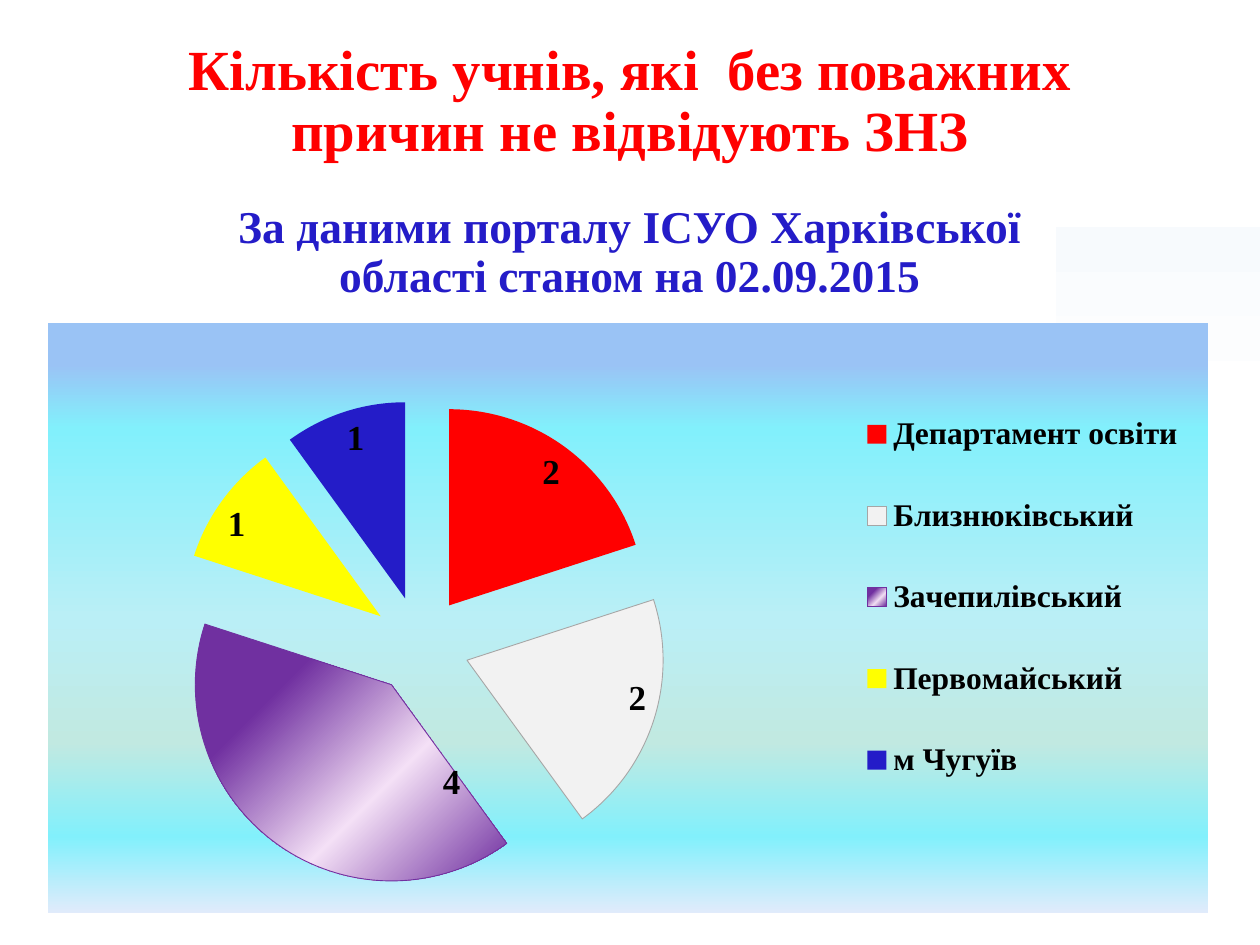
from lxml.etree import fromstring
from pptx import Presentation
from pptx.chart.data import CategoryChartData as Data
from pptx.dml.color import RGBColor as RGB
from pptx.enum.chart import XL_CHART_TYPE as Kind, XL_LABEL_POSITION as Spot
from pptx.enum.chart import XL_LEGEND_POSITION as Side
from pptx.enum.shapes import MSO_SHAPE as Form
from pptx.enum.text import MSO_ANCHOR as Anchor, PP_ALIGN as Align
from pptx.util import Inches, Pt

RED, BLUE = RGB(255, 0, 0), RGB(0x24, 0x1C, 0xC8)
YELLOW, PALE = RGB(255, 255, 0), RGB(0xF2, 0xF2, 0xF2)
PURPLE, GREY = RGB(0x70, 0x30, 0xA0), RGB(0xA6, 0xA6, 0xA6)
BLACK = RGB(0, 0, 0)
SERIF = "Times New Roman"
NS = ('xmlns:a="http://schemas.openxmlformats.org/drawingml/2006/main" '
      'xmlns:c="http://schemas.openxmlformats.org/drawingml/2006/chart"')


def grad(stops, angle):
    """Linear gradient fill from (percent, hex colour) stops."""
    marks = "".join(f'<a:gs pos="{pos * 1000}"><a:srgbClr val="{tone}"/></a:gs>'
                    for pos, tone in stops)
    return fromstring(f'<a:gradFill {NS} rotWithShape="1"><a:gsLst>{marks}</a:gsLst>'
                      f'<a:lin ang="{angle * 60000}" scaled="0"/></a:gradFill>')


def layout(inner=False, mode=True, **share):
    """Manual chart layout in shares of the chart's size."""
    tags = '<c:layoutTarget val="inner"/>' if inner else ""
    if mode:
        tags += '<c:xMode val="edge"/><c:yMode val="edge"/>'
    tags += "".join(f'<c:{key} val="{val}"/>' for key, val in share.items())
    return fromstring(f'<c:layout {NS}><c:manualLayout>{tags}</c:manualLayout></c:layout>')


deck = Presentation()
deck.slide_width, deck.slide_height = Inches(10), Inches(7.5)
slide = deck.slides.add_slide(deck.slide_layouts[5])
shapes = slide.shapes
title = shapes.title

# Faint panel at the right edge, behind everything
panel = shapes.add_shape(Form.RECTANGLE, Inches(8.38), Inches(1.8), Inches(1.62), Inches(1.92))
panel.shadow.inherit = False
panel.line.fill.background()
panel.fill.solid()
fill = panel.fill._xPr.find("{*}solidFill")
fill.getparent().replace(fill, grad([(0, "F7FAFD"), (74, "FFFFFF"), (100, "FFFFFF")], 90))
title._element.addprevious(panel._element)

# Heading and source line
note = shapes.add_textbox(0, 0, 0, 0)
heads = [
    (title, (0.75, 0.31, 8.5, 1.04), Anchor.BOTTOM, 32.4, RED,
     "Кількість учнів, які  без поважних причин не відвідують ЗНЗ"),
    (note, (1.25, 1.57, 7.5, 0.93), Anchor.TOP, 26, BLUE,
     "За даними порталу ІСУО Харківської області станом на 02.09.2015"),
]
for box, place, anchor, size, tone, words in heads:
    box.left, box.top, box.width, box.height = map(Inches, place)
    frame = box.text_frame
    frame.text = words
    frame.word_wrap, frame.vertical_anchor = True, anchor
    para = frame.paragraphs[0]
    para.alignment, para.line_spacing = Align.CENTER, 0.9
    for key, val in dict(name=SERIF, size=Pt(size), bold=True).items():
        setattr(para.font, key, val)
    para.font.color.rgb = tone

# Pie chart
data = Data()
data.categories = ["Департамент освіти", "Близнюківський", "Зачепилівський",
                   "Первомайський", "м Чугуїв"]
data.add_series("Series 1", (2, 2, 4, 1, 1))
chart = shapes.add_chart(Kind.PIE, Inches(0.38), Inches(2.56), Inches(9.21),
                         Inches(4.69), data).chart
chart.has_title = False
chart.font.size, chart.font.name = Pt(10), "Calibri"
plot = chart.plots[0]
plot.vary_by_categories = True
area = plot._element.getparent()
for old in area.findall("{*}layout"):
    area.remove(old)
area.insert(0, layout(inner=True, x=0.013, y=0.131, w=0.616, h=0.83))

# Chart backdrop
back = fromstring(f"<c:spPr {NS}><a:ln><a:noFill/></a:ln></c:spPr>")
back.insert(0, grad([(7, "9AC3F5"), (18, "82F0FC"), (50, "BAEFF6"), (71, "C1E9E1"),
                     (87, "82F0FC"), (100, "E1EBFB")], 90))
chart._chartSpace.find("{*}chart").addnext(back)

# Slices, pulled apart
pie = plot.series[0]
edges = {1: GREY, 2: PURPLE}
for num, tone in enumerate([RED, PALE, PURPLE, YELLOW, BLUE]):
    look = pie.points[num].format
    look.fill.solid()
    look.fill.fore_color.rgb = tone
    if num in edges:
        look.line.color.rgb, look.line.width = edges[num], Pt(0.5)
    else:
        look.line.fill.background()
fill = pie.points[2].format.fill._xPr.find("{*}solidFill")
fill.getparent().replace(fill, grad([(7, "7030A0"), (26, "7030A0"), (62, "F4E0F6"),
                                     (99, "7030A0")], 45))
pie._element.find("{*}dPt").addprevious(fromstring(f'<c:explosion {NS} val="25"/>'))

# Value labels, the largest slice's one moved aside
moved = pie.points[2].data_label
labels = pie.data_labels
labels.show_value = True
for label in (moved, labels):
    label.position = Spot.INSIDE_END
    for key, val in dict(name=SERIF, size=Pt(20), bold=True).items():
        setattr(label.font, key, val)
    label.font.color.rgb = BLACK
tag = labels._element.find("{*}dLbl")
tag.find("{*}idx").addnext(layout(mode=False, x=0.14, y=-0.06))
for key, val in dict(showVal="1", showPercent="0", showCatName="0").items():
    tag.find("{*}" + key).set("val", val)

# Legend
chart.has_legend = True
legend = chart.legend
legend.position, legend.include_in_layout = Side.RIGHT, False
for key, val in dict(name=SERIF, size=Pt(18), bold=True).items():
    setattr(legend.font, key, val)
legend.font.color.rgb = BLACK
for old in legend._element.findall("{*}layout"):
    legend._element.remove(old)
legend._element.find("{*}legendPos").addnext(layout(x=0.69, y=0.08, w=0.3, h=0.77))

deck.save("out.pptx")
